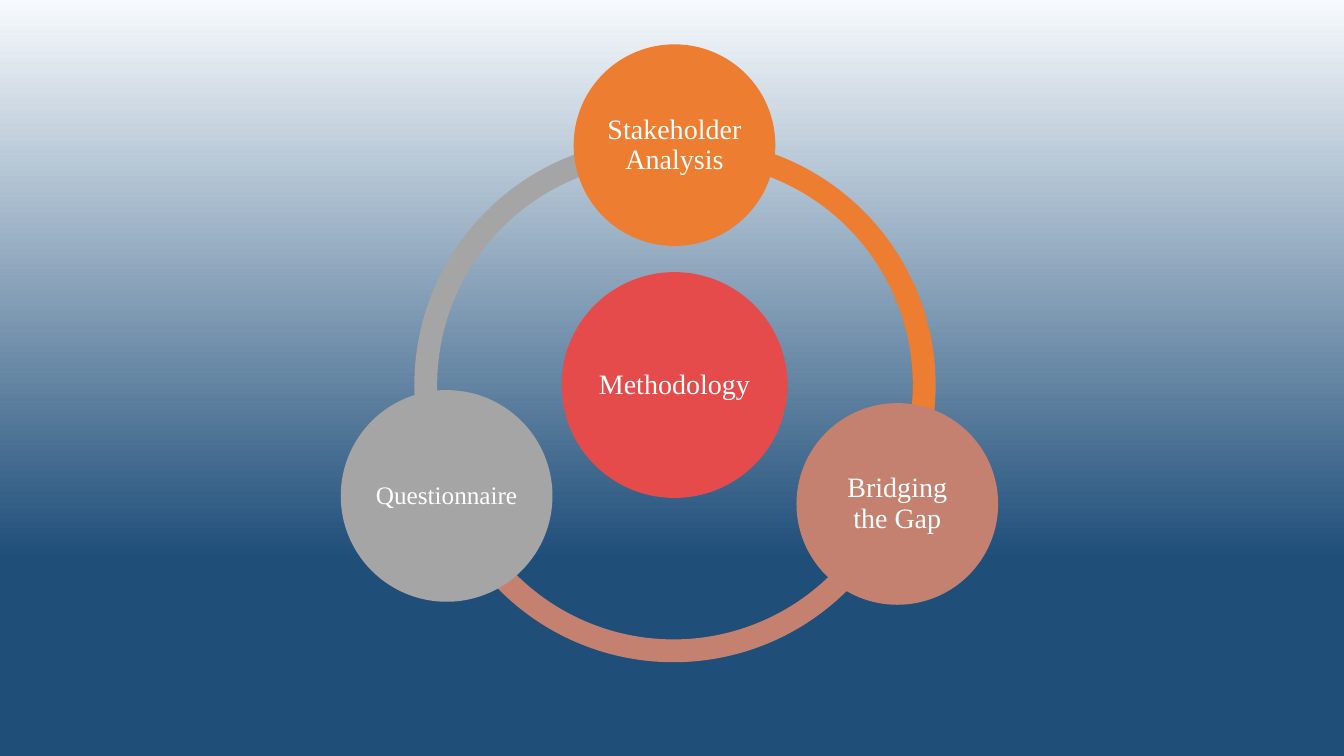
from copy import deepcopy
from dataclasses import dataclass

from lxml.etree import SubElement
from pptx import Presentation
from pptx.dml.color import RGBColor
from pptx.enum.shapes import MSO_SHAPE
from pptx.enum.text import MSO_ANCHOR, PP_ALIGN
from pptx.oxml.ns import qn
from pptx.slide import Slide
from pptx.text.text import TextFrame
from pptx.util import Inches, Pt

WHITE = RGBColor(0xFF, 0xFF, 0xFF)
RED = RGBColor(0xE5, 0x4B, 0x4B)
ORANGE = RGBColor(0xED, 0x7D, 0x31)
ROSE = RGBColor(0xC4, 0x81, 0x70)
GRAY = RGBColor(0xA5, 0xA5, 0xA5)
PALE = RGBColor(0xF7, 0xFA, 0xFD)
NAVY = RGBColor(0x1F, 0x4E, 0x79)

FONT = "Times New Roman"
RING_SIZE = 4.88
RING_THICKNESS = 0.0464
ANGLE_UNIT = 0.6  # adjustment value per degree
INSET = Inches(0.03)


@dataclass(frozen=True)
class Arc:
    left: float
    top: float
    start: float  # degrees, clockwise from the right
    end: float
    color: RGBColor


@dataclass(frozen=True)
class Circle:
    left: float
    top: float
    size: float
    color: RGBColor
    label: str
    font_size: int = 20


ARCS = [
    Arc(4.11, 1.38, 152.33, 273.54, GRAY),
    Arc(4.24, 1.69, 21.2, 160.71, ROSE),
    Arc(4.4, 1.38, 266.56, 29.7, ORANGE),
]
METHODOLOGY = Circle(5.57, 2.7, 2.24, RED, "Methodology")
STEPS = [
    Circle(5.69, 0.44, 2, ORANGE, "Stakeholder Analysis"),
    Circle(7.9, 4, 2, ROSE, "Bridging the Gap"),
    Circle(3.38, 3.87, 2.1, GRAY, "Questionnaire", 18),
]


def paint_background(slide: Slide) -> None:
    fill = slide.background.fill
    fill.gradient()
    fill.gradient_angle = 270
    first, last = fill.gradient_stops
    first.position, first.color.rgb = 0, PALE
    last.position, last.color.rgb = 1, NAVY
    stops = slide.background._cSld.find(".//" + qn("a:gsLst"))
    navy_stop = stops[-1]
    for percent in (74, 83, 89):
        stop = deepcopy(navy_stop)
        stop.set("pos", str(percent * 1000))
        if percent == 74:
            SubElement(stop[0], qn("a:alpha"), val="50000")
        navy_stop.addprevious(stop)


def add_filled(slide: Slide, kind: MSO_SHAPE, left: float, top: float,
               size: float, color: RGBColor):
    shape = slide.shapes.add_shape(
        kind, Inches(left), Inches(top), Inches(size), Inches(size))
    shape.shadow.inherit = False
    shape.fill.solid()
    shape.fill.fore_color.rgb = color
    shape.line.fill.background()
    return shape


def add_arc(slide: Slide, arc: Arc) -> None:
    ring = add_filled(slide, MSO_SHAPE.BLOCK_ARC, arc.left, arc.top,
                      RING_SIZE, arc.color)
    ring.adjustments[0] = arc.start * ANGLE_UNIT
    ring.adjustments[1] = arc.end * ANGLE_UNIT
    ring.adjustments[2] = RING_THICKNESS


def add_circle(slide: Slide, circle: Circle):
    return add_filled(slide, MSO_SHAPE.OVAL, circle.left, circle.top,
                      circle.size, circle.color)


def write_label(frame: TextFrame, circle: Circle) -> None:
    frame.word_wrap = True
    frame.vertical_anchor = MSO_ANCHOR.MIDDLE
    frame.margin_left = frame.margin_right = INSET
    frame.margin_top = frame.margin_bottom = INSET
    paragraph = frame.paragraphs[0]
    paragraph.alignment = PP_ALIGN.CENTER
    paragraph.line_spacing = 0.9
    run = paragraph.add_run()
    run.text = circle.label
    run.font.name = FONT
    run.font.size = Pt(circle.font_size)
    run.font.color.rgb = WHITE


def main() -> None:
    deck = Presentation()
    deck.slide_width, deck.slide_height = Inches(13.33), Inches(7.5)
    slide = deck.slides.add_slide(deck.slide_layouts[5])
    paint_background(slide)

    # Ring
    for arc in ARCS:
        add_arc(slide, arc)

    # Centre circle, with the slide title in front of it
    centre = add_circle(slide, METHODOLOGY)
    title = slide.shapes.title
    margin = Inches(0.33)
    title.left, title.top = centre.left + margin, centre.top + margin
    title.width = title.height = centre.width - 2 * margin
    write_label(title.text_frame, METHODOLOGY)
    centre.element.addnext(title.element)

    # Steps around the ring
    for step in STEPS:
        write_label(add_circle(slide, step).text_frame, step)

    deck.save("out.pptx")


if __name__ == "__main__":
    main()
